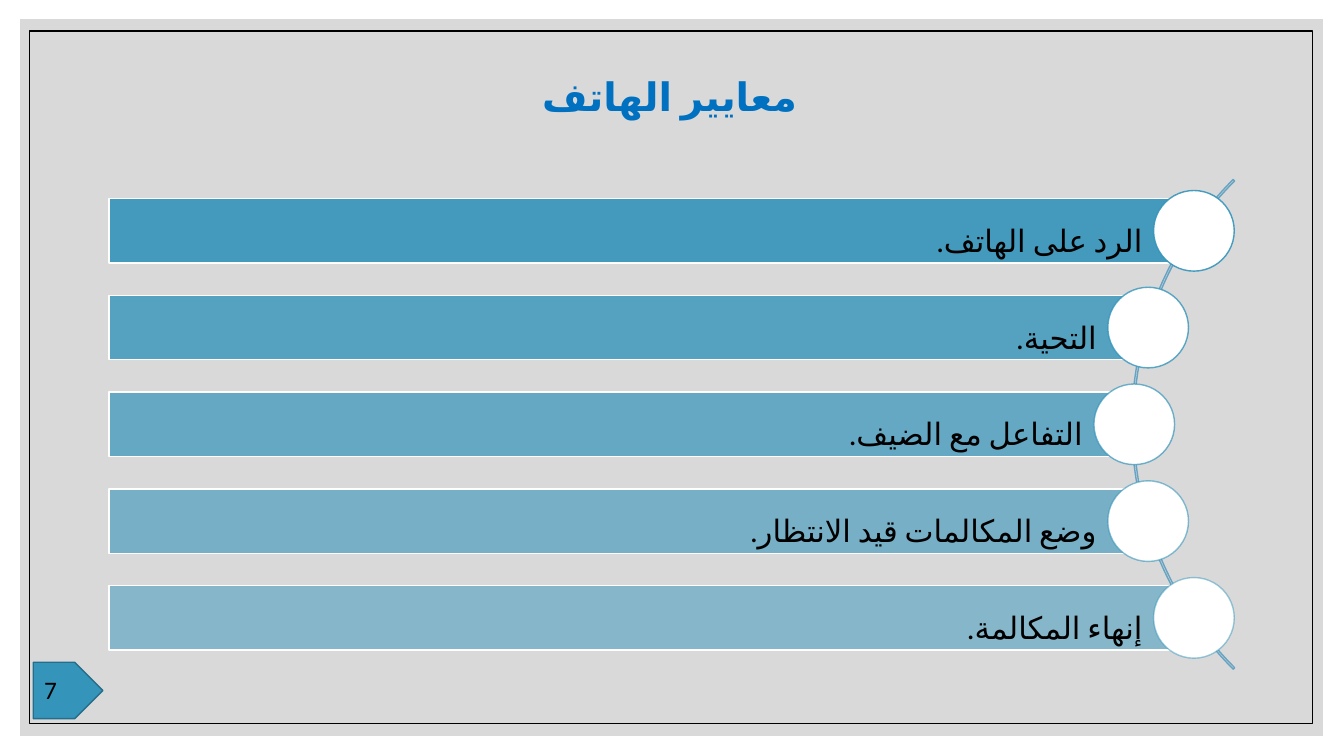
"""Builds the slide of telephone standards: five bars fanned along an arc."""
from math import sqrt

from lxml.etree import SubElement
from pptx import Presentation
from pptx.dml.color import RGBColor
from pptx.enum.shapes import MSO_SHAPE
from pptx.enum.text import MSO_ANCHOR, PP_ALIGN
from pptx.oxml.ns import qn
from pptx.util import Inches, Pt

TITLE = "معايير الهاتف"
STANDARDS = [
    "الرد على الهاتف.",
    "التحية.",
    "التفاعل مع الضيف.",
    "وضع المكالمات قيد الانتظار.",
    "إنهاء المكالمة.",
]
PAGE = "7"
FONT = "Calibri"
TEAL, WHITE, BLACK = "3494BA", "FFFFFF", "000000"

ARC_X, ARC_Y, ARC_R, ARC_BOX = 14.66, 4.21, 3.41, 6.87
BAR_LEFT, BAR_H, CIRCLE, PITCH = 1.08, 0.64, 0.8, 0.96


def rgb(value):
    return RGBColor.from_string(value)


def paint(fill, color, alpha=100):
    fill.solid()
    fill.fore_color.rgb = rgb(color)
    if alpha < 100:
        clr = fill._xPr.find(qn("a:solidFill"))[0]
        SubElement(clr, qn("a:alpha"), val=str(alpha * 1000))


def add_shape(s, kind, box, fill=None, line=None, alpha=100, line_alpha=100):
    sp = s.shapes.add_shape(kind, *map(Inches, box))
    sp.shadow.inherit = False
    if fill:
        paint(sp.fill, fill, alpha)
    else:
        sp.fill.background()
    if line:
        sp.line.width = Pt(1)
        paint(sp.line.fill, line, line_alpha)
    else:
        sp.line.fill.background()
    return sp


def write(sp, text, size, color, rtl=True, frame=None, para=None, **font):
    tf = sp.text_frame
    for key, value in {"word_wrap": True, **(frame or {})}.items():
        setattr(tf, key, value)
    p = tf.paragraphs[0]
    for key, value in (para or {}).items():
        setattr(p, key, value)
    r = p.add_run()
    r.text = text
    for key, value in {"size": Pt(size), "name": FONT, **font}.items():
        setattr(r.font, key, value)
    r.font.color.rgb = rgb(color)
    props = r._r.get_or_add_rPr()
    SubElement(props, qn("a:cs"), typeface=FONT)
    if rtl:
        p._p.get_or_add_pPr().set("rtl", "1")
        props.set("lang", "ar-SA")
    return p


def add_standard(s, i, text):
    dy = (i - (len(STANDARDS) - 1) / 2) * PITCH
    cx, cy = ARC_X - sqrt(ARC_R ** 2 - dy ** 2), ARC_Y + dy
    alpha = 90 - 10 * i
    bar = add_shape(s, MSO_SHAPE.RECTANGLE,
                    (BAR_LEFT, cy - BAR_H / 2, cx - BAR_LEFT, BAR_H), TEAL, WHITE, alpha)
    inset = Inches(0.06)
    frame = {"vertical_anchor": MSO_ANCHOR.MIDDLE, "margin_left": inset,
             "margin_top": inset, "margin_bottom": inset, "margin_right": Inches(0.51)}
    p = write(bar, text, 22, BLACK, frame=frame,
              para={"alignment": PP_ALIGN.JUSTIFY, "line_spacing": 1.5})
    after = SubElement(p._p.get_or_add_pPr(), qn("a:spcAft"))
    SubElement(after, qn("a:spcPct"), val="35000")
    add_shape(s, MSO_SHAPE.OVAL, (cx - CIRCLE / 2, cy - CIRCLE / 2, CIRCLE, CIRCLE),
              WHITE, TEAL, line_alpha=alpha)


def main():
    prs = Presentation()
    prs.slide_width, prs.slide_height = Inches(13.33), Inches(7.5)
    s = prs.slides.add_slide(prs.slide_layouts[6])
    paint(s.background.fill, WHITE)

    add_shape(s, MSO_SHAPE.RECTANGLE, (0.2, 0.19, 12.92, 7.11), "D9D9D9")
    add_shape(s, MSO_SHAPE.RECTANGLE, (0.29, 0.31, 12.73, 6.87), line=BLACK)
    add_shape(s, MSO_SHAPE.PENTAGON, (0.33, 6.57, 0.69, 0.56), TEAL, "266D8A")
    page = s.shapes.add_textbox(*map(Inches, (0.34, 6.64, 0.6, 0.42)))
    write(page, PAGE, 18, BLACK, rtl=False)

    title = s.shapes.add_textbox(*map(Inches, (2.19, 0.47, 8.9, 0.97)))
    write(title, TITLE, 28, "0070C0", frame={"vertical_anchor": MSO_ANCHOR.MIDDLE},
          para={"alignment": PP_ALIGN.CENTER}, bold=True)

    arc = add_shape(s, MSO_SHAPE.BLOCK_ARC,
                    (ARC_X - ARC_BOX / 2, ARC_Y - ARC_BOX / 2, ARC_BOX, ARC_BOX),
                    line="67A3C2")
    for k, value in enumerate((81, 135, 0.003)):
        arc.adjustments[k] = value
    for i, text in enumerate(STANDARDS):
        add_standard(s, i, text)
    prs.save("out.pptx")


if __name__ == "__main__":
    main()
